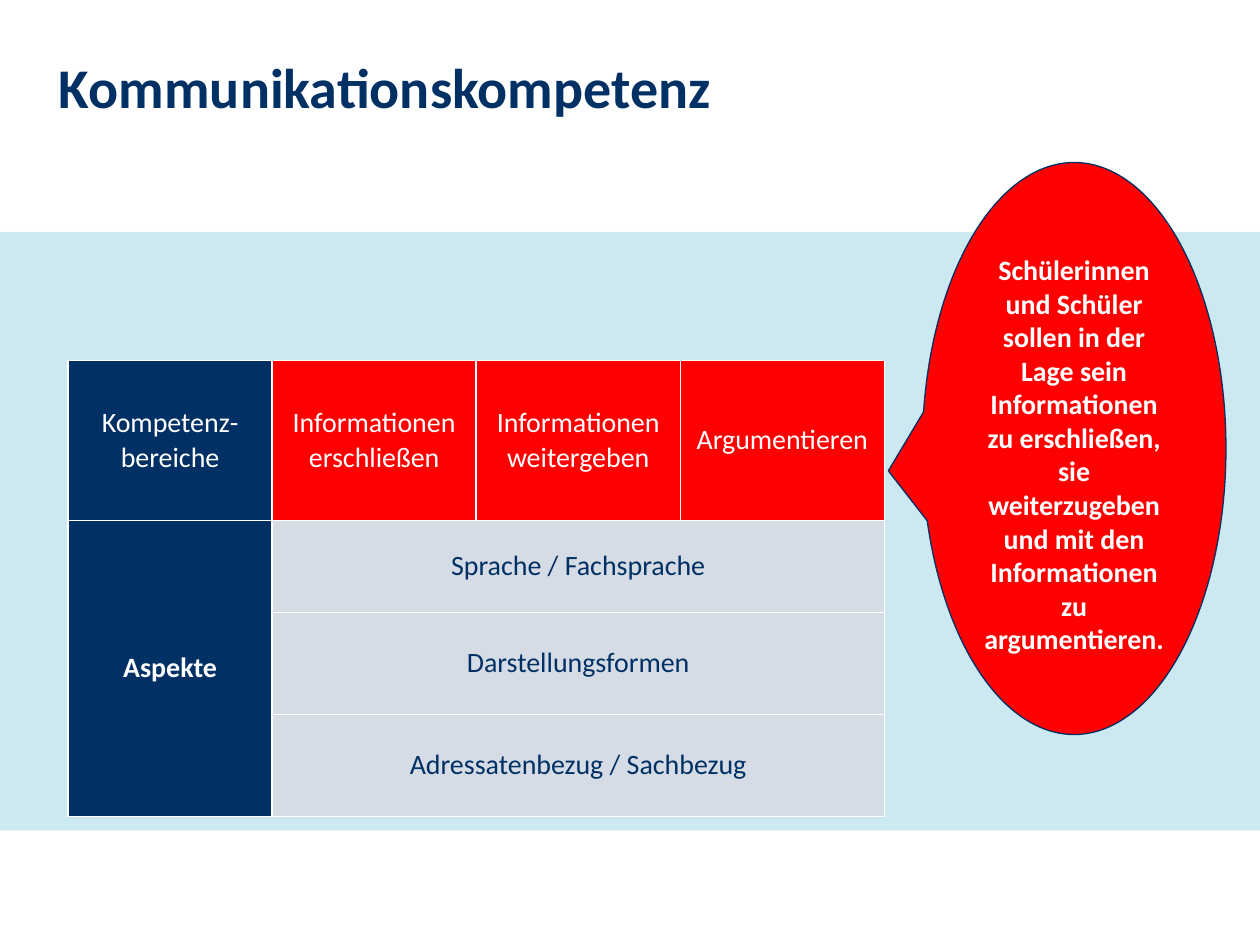
from dataclasses import dataclass

from lxml.etree import SubElement
from pptx import Presentation
from pptx.dml.color import RGBColor
from pptx.enum.shapes import MSO_SHAPE
from pptx.enum.text import MSO_ANCHOR, PP_ALIGN
from pptx.oxml.ns import qn
from pptx.util import Inches, Pt


@dataclass(frozen=True)
class Theme:
    font: str = "Calibri"
    title_size: float = 32
    body_size: float = 16
    border_width: float = 0.96
    outline_width: float = 0.75
    navy: str = "003064"
    red: str = "FF0000"
    band: str = "CCE9F2"
    grey: str = "D6DCE5"
    white: str = "FFFFFF"


THEME = Theme()
COLUMN_WIDTHS = [1.62] * 4
ROW_HEIGHTS = [1.27, 0.73, 0.81, 0.81]
COMPETENCES = ["Informationen erschließen", "Informationen weitergeben", "Argumentieren"]
ASPECTS = ["Sprache / Fachsprache", "Darstellungsformen", "Adressatenbezug / Sachbezug"]
GOAL = (
    "Schülerinnen und Schüler sollen in der Lage sein Informationen zu erschließen, "
    "sie weiterzugeben und mit den Informationen zu argumentieren."
)


def box(left, top, width, height):
    return [Inches(length) for length in (left, top, width, height)]


def write(text_frame, text, color, size=THEME.body_size, bold=False, align=PP_ALIGN.CENTER):
    paragraph = text_frame.paragraphs[0]
    paragraph.text = text
    paragraph.alignment = align
    font = paragraph.font
    font.name, font.size, font.bold = THEME.font, Pt(size), bold
    font.color.rgb = RGBColor.from_string(color)


def add_filled_shape(slide, kind, place, fill):
    shape = slide.shapes.add_shape(kind, *box(*place))
    shape.shadow.inherit = False
    shape.fill.solid()
    shape.fill.fore_color.rgb = RGBColor.from_string(fill)
    shape.line.fill.background()
    return shape


def add_title(slide, text):
    text_frame = slide.shapes.add_textbox(*box(0.37, 0.37, 5.6, 0.92)).text_frame
    text_frame.word_wrap = True
    write(text_frame, text, THEME.navy, THEME.title_size, True, PP_ALIGN.LEFT)


def add_callout(slide, text):
    callout = add_filled_shape(
        slide, MSO_SHAPE.OVAL_CALLOUT, (7.32, 1.29, 2.41, 4.54), THEME.red
    )
    callout.adjustments[0], callout.adjustments[1] = -0.612, 0.039
    callout.line.color.rgb = RGBColor.from_string(THEME.navy)
    callout.line.width = Pt(THEME.outline_width)
    callout.text_frame.word_wrap = True
    callout.text_frame.vertical_anchor = MSO_ANCHOR.TOP
    write(callout.text_frame, text, THEME.white, bold=True)


def style_cell(cell, fill):
    """Give a cell its borders, which must precede the fill in the XML, and its fill."""
    properties = cell._tc.get_or_add_tcPr()
    for side in ("a:lnL", "a:lnR", "a:lnT", "a:lnB"):
        line = SubElement(properties, qn(side), w=str(Pt(THEME.border_width)))
        SubElement(SubElement(line, qn("a:solidFill")), qn("a:srgbClr"), val=THEME.white)
    cell.fill.solid()
    cell.fill.fore_color.rgb = RGBColor.from_string(fill)
    cell.vertical_anchor = MSO_ANCHOR.MIDDLE


def add_competence_table(slide):
    place = box(0.54, 2.86, sum(COLUMN_WIDTHS), sum(ROW_HEIGHTS))
    table = slide.shapes.add_table(len(ROW_HEIGHTS), len(COLUMN_WIDTHS), *place).table
    for column, width in zip(table.columns, COLUMN_WIDTHS):
        column.width = Inches(width)
    for row_index, (row, height) in enumerate(zip(table.rows, ROW_HEIGHTS)):
        row.height = Inches(height)
        for column_index, cell in enumerate(row.cells):
            body_fill = THEME.grey if row_index else THEME.red
            style_cell(cell, body_fill if column_index else THEME.navy)

    write(table.cell(0, 0).text_frame, "Kompetenz-bereiche", THEME.white)
    for column_index, competence in enumerate(COMPETENCES, start=1):
        write(table.cell(0, column_index).text_frame, competence, THEME.white)
    table.cell(1, 0).merge(table.cell(len(ASPECTS), 0))
    write(table.cell(1, 0).text_frame, "Aspekte", THEME.white, bold=True)
    for row_index, aspect in enumerate(ASPECTS, start=1):
        table.cell(row_index, 1).merge(table.cell(row_index, len(COMPETENCES)))
        write(table.cell(row_index, 1).text_frame, aspect, THEME.navy)


def main():
    presentation = Presentation()
    presentation.slide_width, presentation.slide_height = Inches(10), Inches(7.5)
    slide = presentation.slides.add_slide(presentation.slide_layouts[6])
    add_filled_shape(slide, MSO_SHAPE.RECTANGLE, (0, 1.84, 10, 4.75), THEME.band)
    add_title(slide, "Kommunikationskompetenz")
    add_competence_table(slide)
    add_callout(slide, GOAL)
    presentation.save("out.pptx")


if __name__ == "__main__":
    main()
